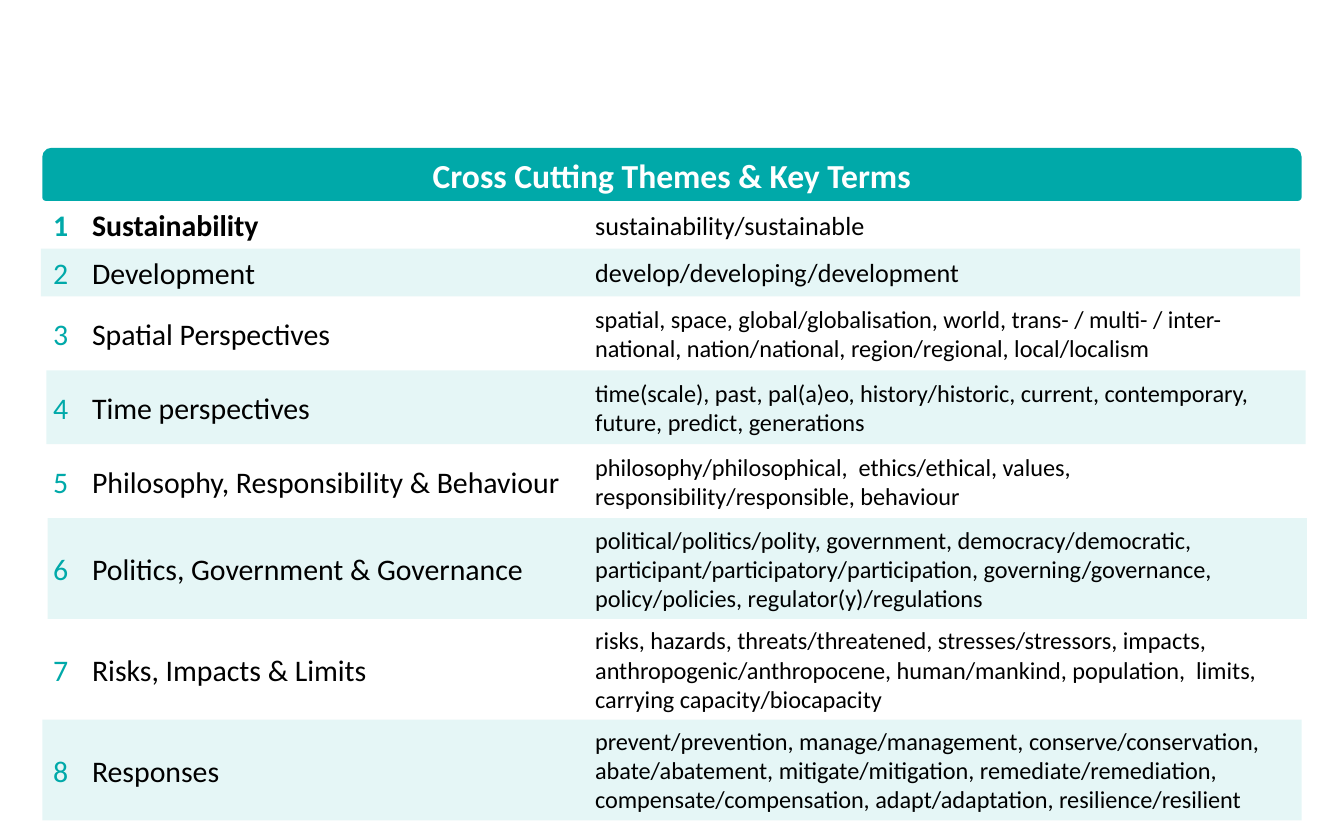
from dataclasses import dataclass

from lxml import etree
from pptx import Presentation
from pptx.dml.color import RGBColor
from pptx.enum.shapes import MSO_SHAPE
from pptx.enum.text import MSO_ANCHOR, PP_ALIGN
from pptx.oxml.ns import qn
from pptx.shapes.autoshape import Shape
from pptx.slide import Slide
from pptx.text.text import TextFrame, _Paragraph
from pptx.util import Pt

EMU_PER_PX = 4572  # 200 px to the inch
RECTANGLE = MSO_SHAPE.RECTANGLE
ROUNDED_RECTANGLE = MSO_SHAPE.ROUNDED_RECTANGLE
HEADER_SHAPE = MSO_SHAPE.ROUND_2_SAME_RECTANGLE
MIDDLE = MSO_ANCHOR.MIDDLE
LEFT, CENTER = PP_ALIGN.LEFT, PP_ALIGN.CENTER

COLORS = {"teal": "00A9A9", "white": "FFFFFF", "black": "000000"}
FONT = "Calibri"
BAND_OPACITY = 10  # percent
BAND_WIDTH = 1874
HEADER_LEFT, HEADER_TOP, HEADER_HEIGHT = 63, 220, 79
ROWS_TOP = HEADER_TOP + HEADER_HEIGHT
ONE_LINE, TWO_LINES, THREE_LINES = 71, 110, 150  # row heights
THEME_LEFT, NARROW_THEME, WIDE_THEME, NUMBER_INDENT = 79, 478, 764, 58
TERMS_LEFT, TERMS_WIDTH, TERMS_INSET = 866, 1098, 20


@dataclass(frozen=True)
class ThemeRow:
    theme: str
    terms: str
    height: int
    theme_width: int = WIDE_THEME
    terms_size: int = 13
    terms_width: int = TERMS_WIDTH
    band_left: int | None = None
    bold: bool = False


ROWS = [
    ThemeRow(
        "Sustainability", "sustainability/sustainable",
        ONE_LINE, NARROW_THEME, terms_size=14, terms_width=446, bold=True,
    ),
    ThemeRow(
        "Development", "develop/developing/development",
        ONE_LINE, NARROW_THEME, terms_size=14, terms_width=596, band_left=61,
    ),
    ThemeRow(
        "Spatial Perspectives",
        "spatial, space, global/globalisation, world, trans- / multi- / inter-national, "
        "nation/national, region/regional, local/localism",
        TWO_LINES, NARROW_THEME,
    ),
    ThemeRow(
        "Time perspectives",
        "time(scale), past, pal(a)eo, history/historic, current, contemporary, "
        "future, predict, generations",
        TWO_LINES, NARROW_THEME, band_left=69,
    ),
    ThemeRow(
        "Philosophy, Responsibility & Behaviour",
        "philosophy/philosophical,  ethics/ethical, values, "
        "responsibility/responsible, behaviour",
        TWO_LINES,
    ),
    ThemeRow(
        "Politics, Government & Governance",
        "political/politics/polity, government, democracy/democratic, "
        "participant/participatory/participation, governing/governance, "
        "policy/policies, regulator(y)/regulations",
        THREE_LINES, band_left=71,
    ),
    ThemeRow(
        "Risks, Impacts & Limits",
        "risks, hazards, threats/threatened, stresses/stressors, impacts, "
        "anthropogenic/anthropocene, human/mankind, population,  limits, "
        "carrying capacity/biocapacity",
        THREE_LINES,
    ),
    ThemeRow(
        "Responses",
        "prevent/prevention, manage/management, conserve/conservation, "
        "abate/abatement, mitigate/mitigation, remediate/remediation, "
        "compensate/compensation, adapt/adaptation, resilience/resilient",
        THREE_LINES, terms_width=1072, band_left=63,
    ),
]


def px(length: int) -> int:
    return length * EMU_PER_PX


def add_shape(
    slide: Slide, kind: MSO_SHAPE, left: int, top: int, width: int, height: int,
    color: str | None = None,
) -> Shape:
    """Add a shape without line or shadow; it has no fill unless a color is given."""
    shape = slide.shapes.add_shape(kind, px(left), px(top), px(width), px(height))
    shape.shadow.inherit = False
    shape.line.fill.background()
    if color is None:
        shape.fill.background()
    else:
        shape.fill.solid()
        shape.fill.fore_color.rgb = RGBColor.from_string(COLORS[color])
    return shape


def add_band(slide: Slide, left: int, top: int, height: int) -> None:
    band = add_shape(slide, RECTANGLE, left, top, BAND_WIDTH, height, "teal")
    color = band.fill._xPr.find(qn("a:solidFill"))[0]
    etree.SubElement(color, qn("a:alpha"), val=str(BAND_OPACITY * 1000))


def format_frame(frame: TextFrame, inset: int, alignment: PP_ALIGN) -> _Paragraph:
    """Set up a text frame and return its first paragraph."""
    settings = {
        "word_wrap": True,
        "vertical_anchor": MIDDLE,
        "margin_left": px(inset),
        "margin_right": px(inset),
        "margin_top": 0,
        "margin_bottom": 0,
    }
    for name, value in settings.items():
        setattr(frame, name, value)
    paragraph = frame.paragraphs[0]
    paragraph.alignment = alignment
    return paragraph


def add_run(paragraph: _Paragraph, text: str, size: int, color: str, bold: bool = False) -> None:
    run = paragraph.add_run()
    run.text = text
    for name, value in {"name": FONT, "size": Pt(size), "bold": bold}.items():
        setattr(run.font, name, value)
    run.font.color.rgb = RGBColor.from_string(COLORS[color])


def add_header(slide: Slide, title: str) -> None:
    header = add_shape(
        slide, HEADER_SHAPE, HEADER_LEFT, HEADER_TOP, BAND_WIDTH, HEADER_HEIGHT, "teal"
    )
    header.adjustments[0] = 0.17
    header.adjustments[1] = 0.07
    paragraph = format_frame(header.text_frame, TERMS_INSET, CENTER)
    add_run(paragraph, title, 18, "white", bold=True)


def add_theme(slide: Slide, number: int, row: ThemeRow, top: int) -> None:
    label = add_shape(slide, ROUNDED_RECTANGLE, THEME_LEFT, top, row.theme_width, row.height)
    label.adjustments[0] = 0
    paragraph = format_frame(label.text_frame, 0, LEFT)
    properties = paragraph._p.get_or_add_pPr()
    properties.set("marL", str(px(NUMBER_INDENT)))
    properties.set("indent", str(-px(NUMBER_INDENT)))
    add_run(paragraph, str(number), 16, "teal", row.bold)
    add_run(paragraph, f"\t{row.theme}", 16, "black", row.bold)


def add_terms(slide: Slide, row: ThemeRow, top: int) -> None:
    box = slide.shapes.add_textbox(
        px(TERMS_LEFT), px(top), px(row.terms_width), px(row.height)
    )
    paragraph = format_frame(box.text_frame, TERMS_INSET, LEFT)
    add_run(paragraph, row.terms, row.terms_size, "black")


def main() -> None:
    presentation = Presentation()
    presentation.slide_width, presentation.slide_height = px(2000), px(1250)
    slide = presentation.slides.add_slide(presentation.slide_layouts[6])

    add_header(slide, "Cross Cutting Themes & Key Terms")
    top = ROWS_TOP
    for number, row in enumerate(ROWS, start=1):
        if row.band_left is not None:
            add_band(slide, row.band_left, top, row.height)
        add_theme(slide, number, row, top)
        add_terms(slide, row, top)
        top += row.height

    presentation.save("out.pptx")


if __name__ == "__main__":
    main()
